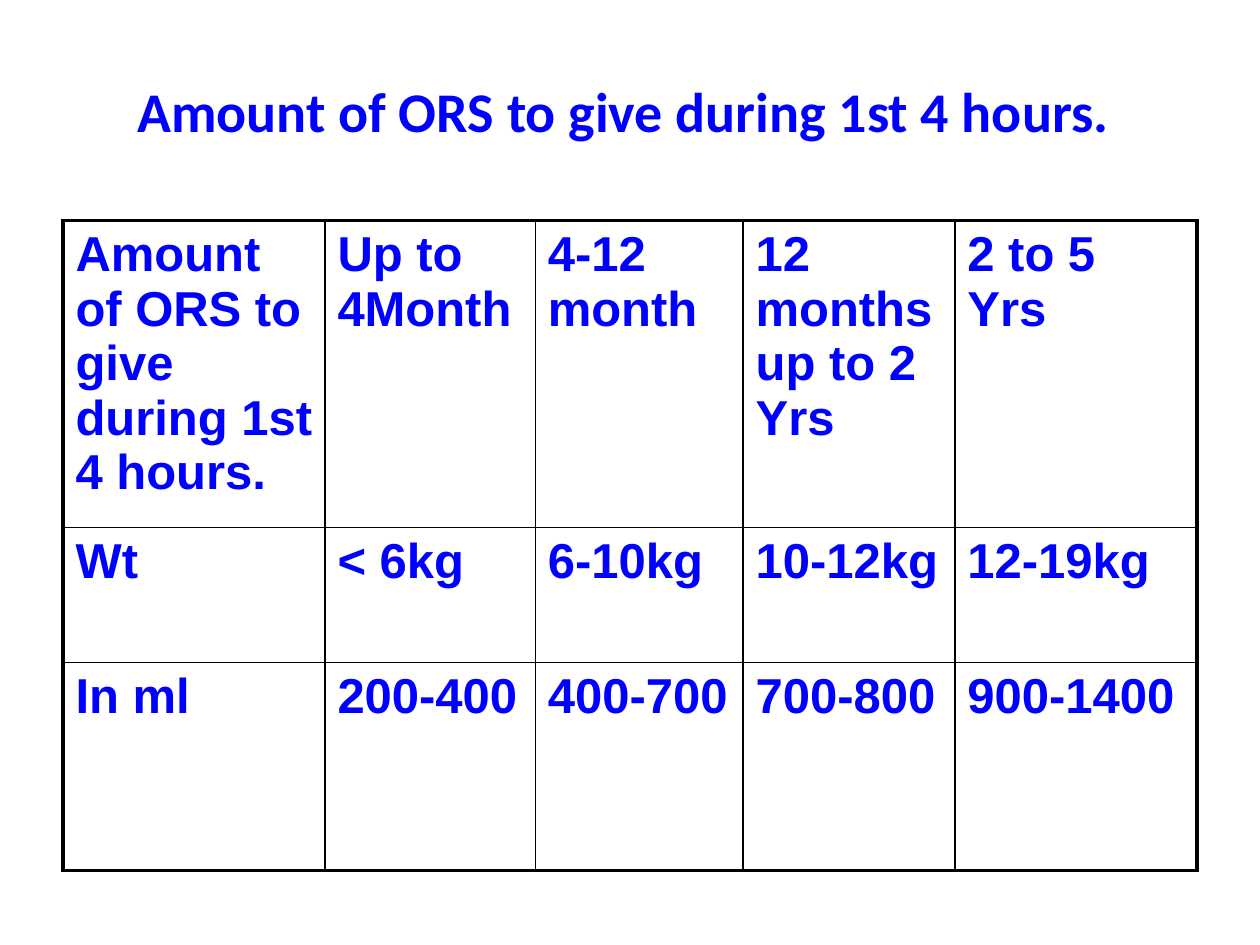
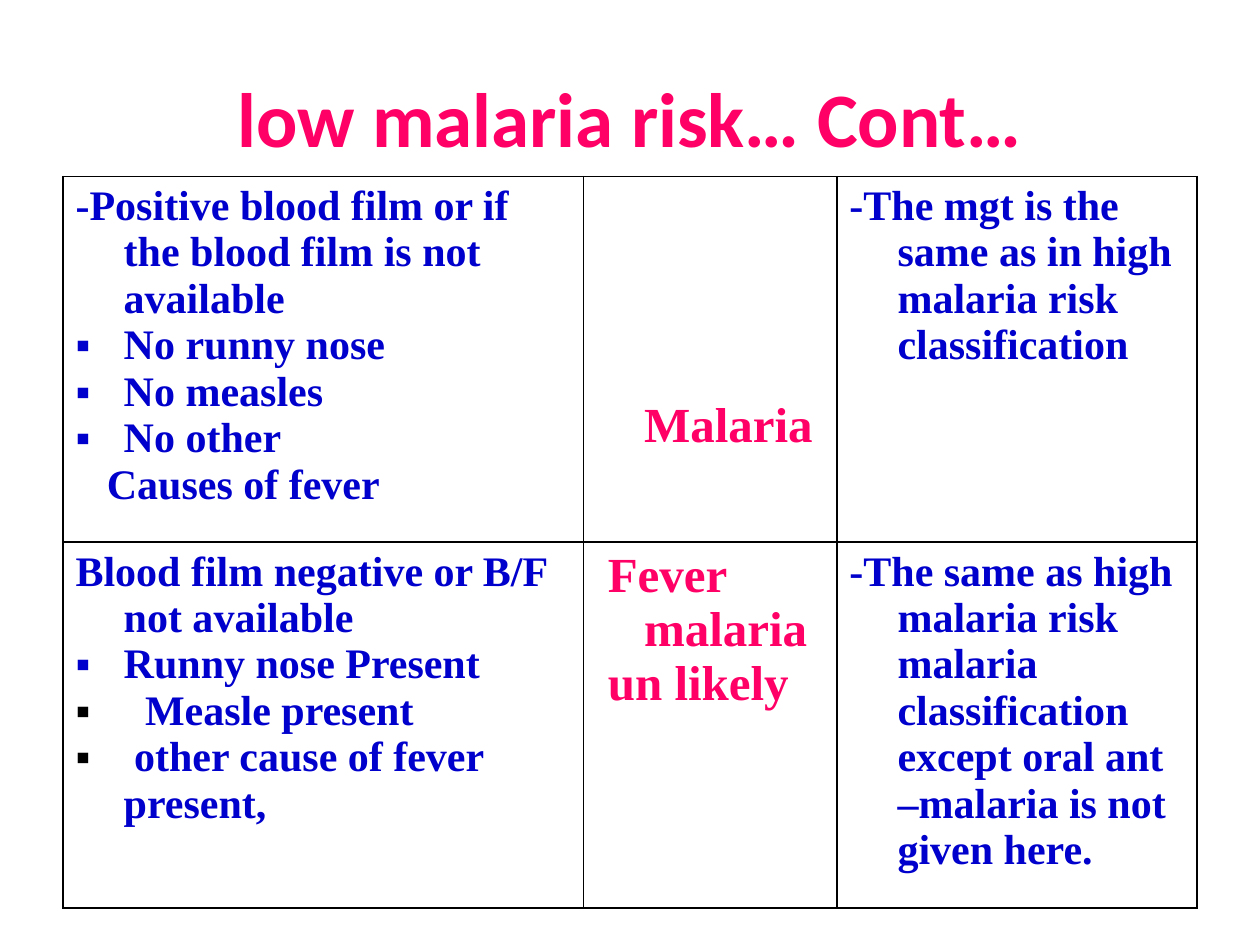
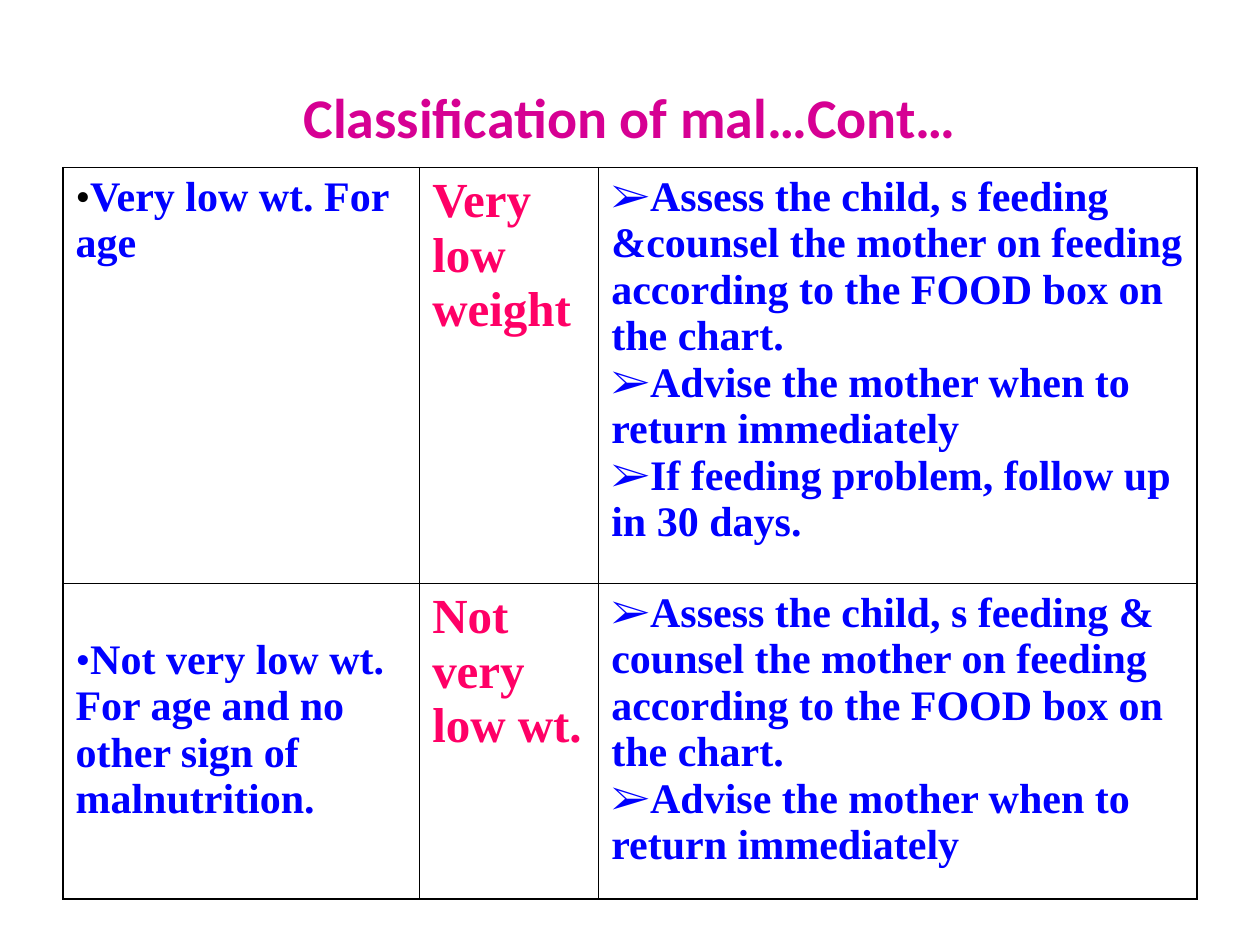
from dataclasses import dataclass

from lxml.etree import SubElement
from pptx import Presentation
from pptx.dml.color import RGBColor
from pptx.enum.text import MSO_ANCHOR, PP_ALIGN
from pptx.oxml.ns import qn
from pptx.util import Cm, Pt


@dataclass(frozen=True)
class Theme:
    black: str = "000000"
    blue: str = "0000FF"
    navy: str = "0000CC"
    pink: str = "FF0066"
    magenta: str = "D60093"
    title_font: str = "Calibri"
    dose_font: str = "Arial"
    chart_font: str = "Times New Roman"
    large_title: int = 44
    title: int = 32
    emphasis: int = 28
    body: int = 24
    thin: float = 1
    thick: float = 2.25


@dataclass(frozen=True)
class Box:
    left: float
    top: float
    width: float
    height: float


THEME = Theme()
MARGIN = 1.27
CONTENT_WIDTH = 22.86
TITLE_HEIGHT = 3.18
HANG = 0.97
CELL_TOP = 0.13


def write_text(frame, text, size, color, font, align=PP_ALIGN.LEFT,
               left=0, first=0, bullet=None, bullet_color=None):
    paragraph = frame.paragraphs[0]
    if paragraph.runs:
        paragraph = frame.add_paragraph()
    paragraph.alignment = align
    run = paragraph.add_run()
    run.text = text
    run.font.size = Pt(size)
    run.font.name = font
    run.font.bold = True
    run.font.color.rgb = RGBColor.from_string(color)
    properties = paragraph._p.get_or_add_pPr()
    properties.set("marL", str(Cm(left)))
    properties.set("indent", str(Cm(first)))
    if bullet:
        tint = SubElement(properties, qn("a:buClr"))
        SubElement(tint, qn("a:srgbClr"), val=bullet_color or color)
        SubElement(properties, qn("a:buFont"), typeface=font)
        SubElement(properties, qn("a:buChar"), char=bullet)
    else:
        SubElement(properties, qn("a:buNone"))


def entry(text, size=THEME.body, color=THEME.blue, font=THEME.chart_font, **layout):
    return dict(text=text, size=size, color=color, font=font, **layout)


def dose(text):
    return entry(text, size=THEME.emphasis, font=THEME.dose_font)


def sign(text, left=HANG, first=-HANG, **layout):
    return entry(text, color=THEME.navy, left=left, first=first, **layout)


def square(text, left=HANG, **layout):
    return sign(text, left=left, first=-left, bullet="▪", **layout)


def verdict(text, **layout):
    return entry(text, size=THEME.emphasis, color=THEME.pink, **layout)


def advice(text):
    return entry(text, bullet="➢")


def draw_title(slide, box, text, size, color):
    title = slide.shapes.add_textbox(Cm(box.left), Cm(box.top), Cm(box.width), Cm(box.height))
    frame = title.text_frame
    frame.word_wrap = True
    frame.vertical_anchor = MSO_ANCHOR.MIDDLE
    write_text(frame, text, size, color, THEME.title_font, align=PP_ALIGN.CENTER)


def draw_borders(cell, widths):
    properties = cell._tc.get_or_add_tcPr()
    for side, width in zip("LRTB", widths):
        line = SubElement(properties, qn(f"a:ln{side}"), w=str(Pt(width)))
        fill = SubElement(line, qn("a:solidFill"))
        SubElement(fill, qn("a:srgbClr"), val=THEME.black)


def draw_table(slide, box, columns, heights, rows, outline=THEME.thin, top_insets=None):
    table = slide.shapes.add_table(
        len(heights), len(columns),
        Cm(box.left), Cm(box.top), Cm(box.width), Cm(box.height)).table
    table.first_row = False
    table.horz_banding = False
    for column, width in zip(table.columns, columns):
        column.width = Cm(width)
    for row, height in zip(table.rows, heights):
        row.height = Cm(height)
    last_row, last_column = len(heights) - 1, len(columns) - 1
    for r, row in enumerate(rows):
        for c, entries in enumerate(row):
            cell = table.cell(r, c)
            cell.margin_top = Cm((top_insets or {}).get((r, c), CELL_TOP))
            edges = (c == 0, c == last_column, r == 0, r == last_row)
            draw_borders(cell, [outline if edge else THEME.thin for edge in edges])
            cell.fill.background()
            for item in entries:
                write_text(cell.text_frame, **item)


def build_table_slide(deck, title, title_size, title_color, title_top, table_top,
                      columns, heights, rows, **table_format):
    slide = deck.slides.add_slide(deck.slide_layouts[6])
    draw_title(slide, Box(MARGIN, title_top, CONTENT_WIDTH, TITLE_HEIGHT),
               title, title_size, title_color)
    draw_table(slide, Box(MARGIN, table_top, CONTENT_WIDTH, sum(heights)),
               columns, heights, rows, **table_format)


def build_ors_doses(deck):
    doses = [
        ["Amount of ORS to give during 1st 4 hours.", "Up to 4Month", "4-12 month",
         "12 months up to 2 Yrs", "2 to 5 Yrs"],
        ["Wt", "< 6kg", "6-10kg", "10-12kg", "12-19kg"],
        ["In ml", "200-400", "400-700", "700-800", "900-1400"],
    ]
    build_table_slide(
        deck, "Amount of ORS to give during 1st 4 hours. ", THEME.title, THEME.blue,
        0.64, 4.45, [5.28, 4.24, 4.19, 4.27, 4.88], [5.77, 2.72, 4.19],
        [[[dose(text)] for text in row] for row in doses], outline=THEME.thick)


def build_malaria_risk(deck):
    rows = [
        [
            [sign("-Positive blood film or if the blood film is not available"),
             square("No runny nose"), square("No measles"), square("No other"),
             sign("Causes of fever", left=0.63, first=0)],
            [verdict("Malaria", left=HANG)],
            [sign("-The mgt is the same as in high malaria risk classification")],
        ],
        [
            [sign("Blood film negative or B/F not available"),
             square("Runny nose Present"),
             square("Measle present", left=1.4, bullet_color=THEME.black),
             square(" other cause of fever present,", bullet_color=THEME.black)],
            [verdict("Fever malaria", left=HANG, first=-0.73),
             verdict("un likely", left=HANG, first=-0.73)],
            [sign("-The same as high malaria risk malaria classification "
                  "except oral ant –malaria is not given here.")],
        ],
    ]
    build_table_slide(
        deck, "low malaria risk… Cont…", THEME.large_title, THEME.pink,
        0.76, 3.56, [10.49, 5.11, 7.26], [6.81, 6.81], rows,
        top_insets={(0, 1): 4.47})


def build_malnutrition(deck):
    rows = [
        [
            [entry("Very low wt. For age", bullet="•", bullet_color=THEME.black)],
            [verdict("Very low weight")],
            [advice("Assess the child, s feeding &counsel the mother on feeding "
                    "according to the FOOD box on the chart."),
             advice("Advise the mother when to return immediately"),
             advice("If feeding problem, follow up in 30 days.")],
        ],
        [
            [entry("Not very low wt. For age and no other sign of malnutrition.",
                   bullet="•")],
            [verdict("Not very low wt.")],
            [advice("Assess the child, s feeding & counsel the mother on feeding "
                    "according to the FOOD box on the chart."),
             advice("Advise the mother when to return immediately")],
        ],
    ]
    build_table_slide(
        deck, "Classification of mal…Cont…", THEME.title, THEME.magenta,
        0.76, 3.38, [7.19, 3.61, 12.06], [8.2, 5.89], rows,
        top_insets={(1, 0): 1.07})


def main():
    deck = Presentation()
    deck.slide_width = Cm(25.4)
    deck.slide_height = Cm(19.05)
    build_ors_doses(deck)
    build_malaria_risk(deck)
    build_malnutrition(deck)
    deck.save("out.pptx")


if __name__ == "__main__":
    main()
